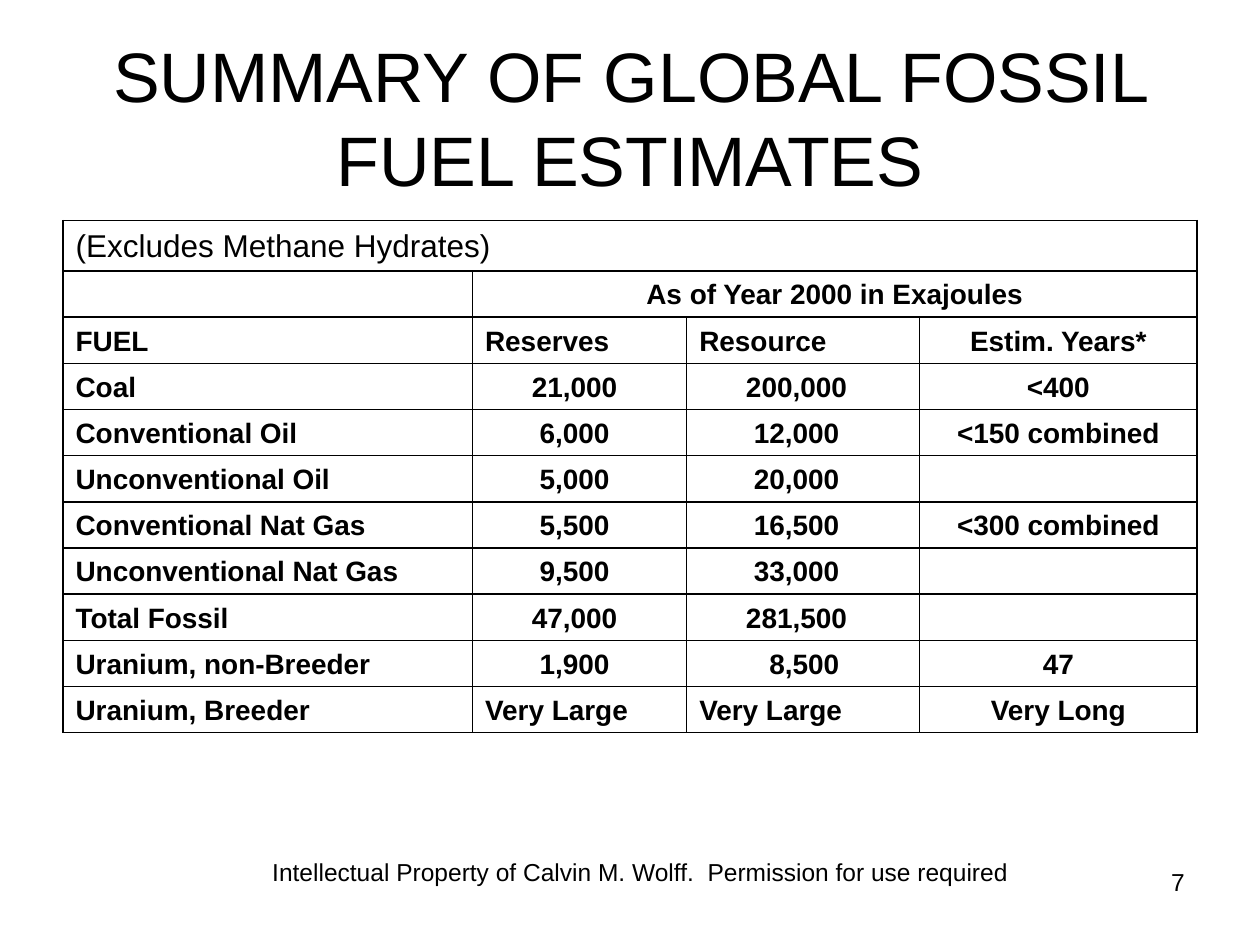
from lxml.etree import SubElement
from pptx import Presentation
from pptx.dml.color import RGBColor
from pptx.enum.text import MSO_ANCHOR as Anchor, PP_ALIGN as Align
from pptx.oxml.ns import qn
from pptx.util import Pt

COLORS = {"ink": "000000"}
FONT = "Arial"
INSET = 7.2
SPACE = 4.45
COLUMNS = [234, 122.4, 133.2, 158.4]
TOP_ROW, ROW, SPARE_ROW = 28.8, 26.4, 49.4
SPARE_ROWS = 2
HEADERS = ["FUEL", "Reserves", "Resource", "Estim. Years*"]
FUELS = [
    (["Coal", "21,000", "200,000", "<400"], (6, 6)),
    (["Conventional Oil", "6,000", "12,000", "<150 combined"], (7, 7)),
    (["Unconventional Oil", "5,000", "20,000", ""], (7, 7)),
    (["Conventional Nat Gas", "5,500", "16,500", "<300 combined"], (7, 7)),
    (["Unconventional Nat Gas", "9,500", "33,000", ""], (7, 7)),
    (["Total Fossil", "47,000", "281,500", ""], (6, 6)),
    (["Uranium, non-Breeder", "1,900", "8,500", "47"], (7, 9)),
    (["Uranium, Breeder", "Very Large", "Very Large", "Very Long"], (0, 0)),
]


def place(shape, box):
    shape.left, shape.top, shape.width, shape.height = (Pt(v) for v in box)


def style(paragraph, size, align=Align.LEFT, bold=False):
    paragraph.alignment = align
    font = paragraph.font
    font.name, font.size, font.bold = FONT, Pt(size), bold
    font.color.rgb = RGBColor.from_string(COLORS["ink"])


def add_title(slide, box):
    title = slide.shapes.title
    place(title, box)
    title.text_frame.text = "SUMMARY OF GLOBAL FOSSIL FUEL ESTIMATES"
    title.text_frame.vertical_anchor = Anchor.MIDDLE
    style(title.text_frame.paragraphs[0], 40, Align.CENTER)


def add_note(slide, box, text, align):
    frame = slide.shapes.add_textbox(*(Pt(v) for v in box)).text_frame
    frame.word_wrap = True
    frame.text = text
    style(frame.paragraphs[0], 14, align)


def set_borders(cell, drawn):
    properties = cell._tc.get_or_add_tcPr()
    for position, side in enumerate(("lnL", "lnR", "lnT", "lnB")):
        line = SubElement(properties, qn(f"a:{side}"), w=str(Pt(1)))
        properties.remove(line)
        properties.insert(position, line)
        if side in drawn:
            fill = SubElement(line, qn("a:solidFill"))
            SubElement(fill, qn("a:srgbClr"), val=COLORS["ink"])
        else:
            SubElement(line, qn("a:noFill"))


def add_estimates(slide, box):
    rows = [
        (["(Excludes Methane Hydrates)", "", "", ""], (0, 0)),
        (["", "As of Year 2000 in Exajoules", "", ""], (0, 0)),
        (HEADERS, (0, 0)),
        *FUELS,
        *[([""] * len(COLUMNS), (0, 0))] * SPARE_ROWS,
    ]
    filled = len(rows) - SPARE_ROWS
    table = slide.shapes.add_table(
        len(rows), len(COLUMNS), *(Pt(v) for v in box)).table
    table.first_row = table.horz_banding = False
    for column, width in zip(table.columns, COLUMNS):
        column.width = Pt(width)
    heights = [TOP_ROW] + [ROW] * (filled - 1) + [SPARE_ROW] * SPARE_ROWS
    for r, ((texts, leads), height) in enumerate(zip(rows, heights)):
        table.rows[r].height = Pt(height)
        sides = ("lnL", "lnR", "lnT", "lnB") if r < filled else ()
        if r == filled:
            sides = ("lnT",)
        for c, (text, lead) in enumerate(zip(texts, (0, *leads, 0))):
            cell = table.cell(r, c)
            cell.text = text
            cell.fill.background()
            cell.vertical_anchor = Anchor.BOTTOM
            cell.margin_left = Pt(round(INSET + lead * SPACE, 2))
            centred = c == 3 or (r, c) == (1, 1)
            style(cell.text_frame.paragraphs[0], 16 if r else 18,
                  Align.CENTER if centred else Align.LEFT, r > 0)
            set_borders(cell, sides)
    table.cell(0, 0).merge(table.cell(0, 3))
    table.cell(1, 1).merge(table.cell(1, 3))


def main():
    deck = Presentation()
    deck.slide_width, deck.slide_height = Pt(720), Pt(540)
    slide = deck.slides.add_slide(deck.slide_layouts[5])
    add_title(slide, (36, 21.6, 648, 90))
    add_estimates(slide, (36, 126, 648, 391.6))
    add_note(slide, (138, 486, 456, 37.5),
             "Intellectual Property of Calvin M. Wolff.  Permission for use required",
             Align.CENTER)
    add_note(slide, (516, 492, 168, 37.5), "7", Align.RIGHT)
    deck.save("out.pptx")


if __name__ == "__main__":
    main()
